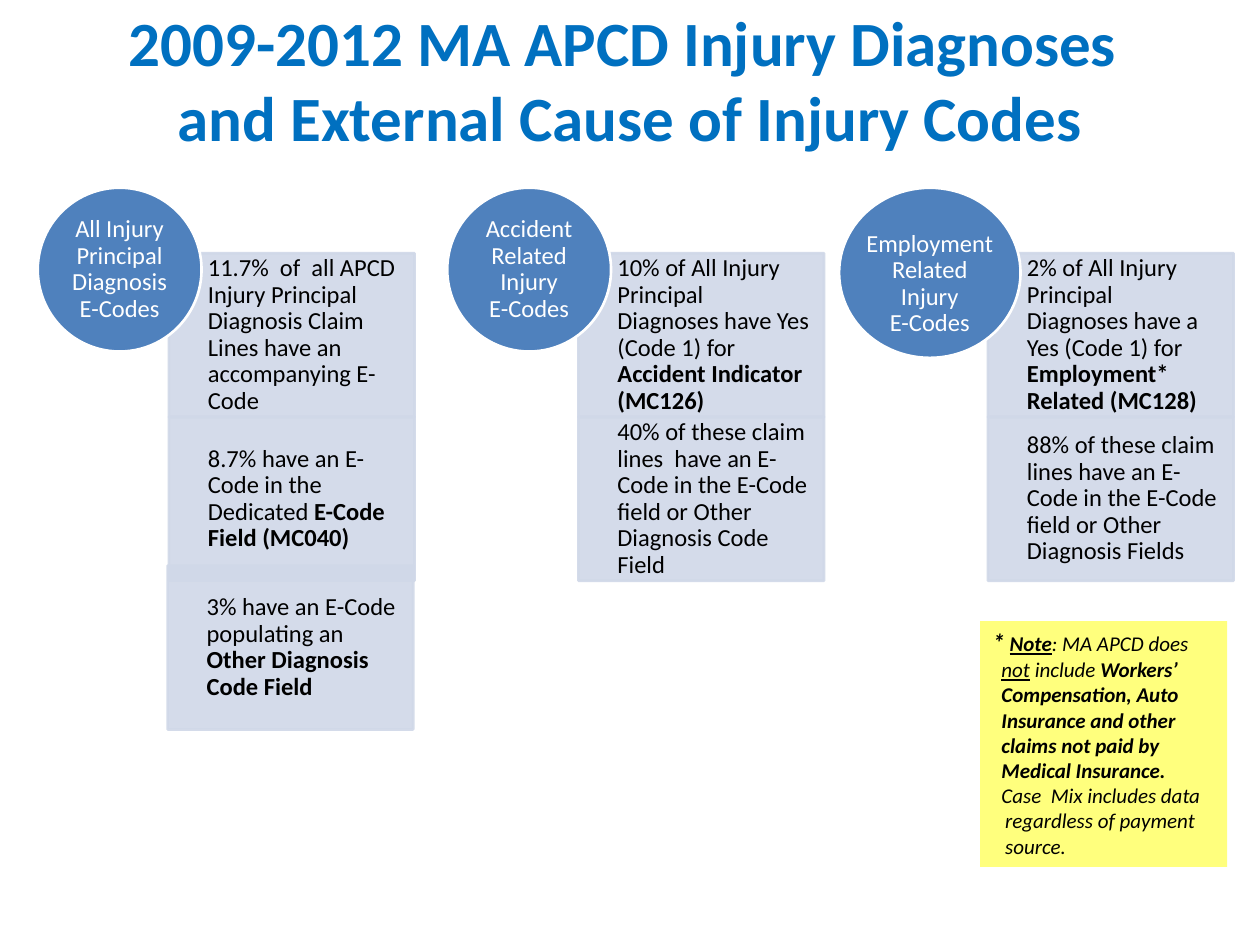
"""Build the slide on injury diagnoses and external cause of injury codes."""
from lxml import etree
from pptx import Presentation
from pptx.dml.color import RGBColor
from pptx.enum.shapes import MSO_SHAPE
from pptx.enum.text import MSO_ANCHOR, MSO_AUTO_SIZE, PP_ALIGN
from pptx.oxml.ns import qn
from pptx.util import Inches, Pt

RECTANGLE, OVAL = MSO_SHAPE.RECTANGLE, MSO_SHAPE.OVAL
TOP, MIDDLE = MSO_ANCHOR.TOP, MSO_ANCHOR.MIDDLE
LEFT, CENTER = PP_ALIGN.LEFT, PP_ALIGN.CENTER
NO_FIT, GROW = MSO_AUTO_SIZE.NONE, MSO_AUTO_SIZE.SHAPE_TO_FIT_TEXT

FONT = "Calibri"
TITLE_BLUE = RGBColor(0x00, 0x70, 0xC0)
CIRCLE_BLUE = RGBColor(0x4F, 0x81, 0xBD)
PANEL_BLUE = RGBColor(0xD0, 0xD8, 0xE8)
NOTE_YELLOW = RGBColor(0xFF, 0xFF, 0x00)
WHITE = RGBColor(0xFF, 0xFF, 0xFF)
BLACK = RGBColor(0x00, 0x00, 0x00)

TITLE = "2009-2012 MA APCD Injury Diagnoses \vand External Cause of Injury Codes"

COLUMNS = [
    {
        "heading": "All Injury\vPrincipal\vDiagnosis\vE-Codes",
        "circle": (0.3, 1.49, 1.3, 1.3),
        "drop": 0,
        "panels": [
            ("11.7%  of  all APCD Injury Principal Diagnosis Claim Lines have "
             "an accompanying E-Code", ""),
            ("8.7% have an E-Code in the Dedicated ", "E-Code Field (MC040)"),
            ("3% have an E-Code populating an ", "Other Diagnosis Code Field"),
        ],
    },
    {
        "heading": "Accident\vRelated\vInjury\vE-Codes",
        "circle": (3.55, 1.49, 1.3, 1.3),
        "drop": 0,
        "panels": [
            ("10% of All Injury Principal Diagnoses have Yes (Code 1) for ",
             "Accident Indicator (MC126)"),
            ("40% of these claim lines  have an E-Code in the E-Code field or "
             "Other Diagnosis Code Field", ""),
        ],
    },
    {
        "heading": "Employment\vRelated\vInjury\vE-Codes",
        "circle": (6.66, 1.49, 1.44, 1.35),
        "drop": 0.18,
        "panels": [
            ("2% of All Injury Principal Diagnoses have a Yes (Code 1) for ",
             "Employment* Related (MC128)"),
            ("88% of these claim lines have an E-Code in the E-Code field or "
             "Other Diagnosis Fields", ""),
        ],
    },
]

NOTE_BOX = (7.78, 4.93, 1.96, 1.95)
NOTE_LINES = [
    (0, [("*", "b"), (" ", "b"), ("Note", "bu"), (": MA APCD does", "")]),
    (0.07, [("not", "u"), (" include ", ""), ("Workers’", "b")]),
    (0.07, [("Compensation, Auto\vInsurance and other\vclaims not paid by\v"
             "Medical Insurance.", "b")]),
    (0.07, [("Case  Mix includes data", "")]),
    (0.1, [("regardless of payment", "")]),
    (0.1, [("source.", "")]),
]

PANEL_LEFT, PANEL_TOP = 1.34, 2.01
PANEL_WIDTH, PANEL_HEIGHT = 1.95, 1.3
COLUMN_STEP = 3.25
LAST_PANEL_SHIFT = (-0.01, -0.12)


def set_opacity(color_format_fill, percent):
    for color in color_format_fill.iter(qn("a:srgbClr")):
        etree.SubElement(color, qn("a:alpha"), val=str(percent * 1000))


def add_block(slide, preset, box, fill, line, insets, anchor):
    block = slide.shapes.add_shape(preset, *map(Inches, box))
    block.shadow.inherit = False
    block.fill.solid()
    block.fill.fore_color.rgb = fill
    if line is None:
        block.line.fill.background()
    else:
        block.line.color.rgb = line
        block.line.width = Pt(1.5)
    frame = block.text_frame
    frame.word_wrap = True
    frame.vertical_anchor = anchor
    (frame.margin_left, frame.margin_top,
     frame.margin_right, frame.margin_bottom) = map(Inches, insets)
    return block


def style(font, size, color, bold=False):
    font.name = FONT
    font.size = Pt(size)
    font.color.rgb = color
    font.bold = bold


def add_panel(slide, box, plain, strong):
    panel = add_block(slide, RECTANGLE, box, PANEL_BLUE, PANEL_BLUE,
                      (0.31, 0.11, 0.11, 0.11), MIDDLE)
    set_opacity(panel.fill._xPr, 90)
    paragraph = panel.text_frame.paragraphs[0]
    paragraph.alignment = LEFT
    paragraph.line_spacing = 0.9
    for text, bold in ((plain, False), (strong, True)):
        if text:
            run = paragraph.add_run()
            run.text = text
            style(run.font, 14, BLACK, bold)


def add_circle(slide, column):
    circle = add_block(slide, OVAL, column["circle"], CIRCLE_BLUE, WHITE,
                       (0, column["drop"], 0, 0), MIDDLE)
    paragraph = circle.text_frame.paragraphs[0]
    paragraph.text = column["heading"]
    paragraph.alignment = CENTER
    paragraph.line_spacing = 0.9
    for run in paragraph.runs:
        style(run.font, 14, WHITE)


def add_note(slide):
    note = add_block(slide, RECTANGLE, NOTE_BOX, NOTE_YELLOW, None,
                     (0.1, 0.05, 0.1, 0.05), TOP)
    set_opacity(note.fill._xPr, 51)
    frame = note.text_frame
    frame.auto_size = GROW
    for index, (indent, pieces) in enumerate(NOTE_LINES):
        paragraph = frame.add_paragraph() if index else frame.paragraphs[0]
        paragraph.alignment = LEFT
        paragraph._p.get_or_add_pPr().set("marL", str(Inches(indent)))
        for text, marks in pieces:
            first_run = len(paragraph.runs)
            if "\v" in text:
                paragraph.text = text
            else:
                paragraph.add_run().text = text
            for run in paragraph.runs[first_run:]:
                style(run.font, 14 if text == "*" else 12, BLACK, "b" in marks)
                run.font.italic = True
                run.font.underline = "u" in marks


def main():
    deck = Presentation()
    deck.slide_width, deck.slide_height = Inches(10), Inches(7.5)
    slide = deck.slides.add_slide(deck.slide_layouts[5])

    title = slide.shapes.title
    title.left, title.top = Inches(0.16), Inches(0)
    title.width, title.height = Inches(9.68), Inches(1.25)
    title.text_frame.text = TITLE
    title.text_frame.auto_size = NO_FIT
    title.text_frame.vertical_anchor = MIDDLE
    for run in title.text_frame.paragraphs[0].runs:
        style(run.font, 36, TITLE_BLUE, True)

    for index, column in enumerate(COLUMNS):
        for row, (plain, strong) in enumerate(column["panels"]):
            shift_x, shift_y = LAST_PANEL_SHIFT if row == 2 else (0, 0)
            left = PANEL_LEFT + index * COLUMN_STEP + shift_x
            top = PANEL_TOP + row * PANEL_HEIGHT + shift_y
            add_panel(slide, (left, top, PANEL_WIDTH, PANEL_HEIGHT), plain, strong)
        add_circle(slide, column)
    add_note(slide)

    deck.save("out.pptx")


if __name__ == "__main__":
    main()
